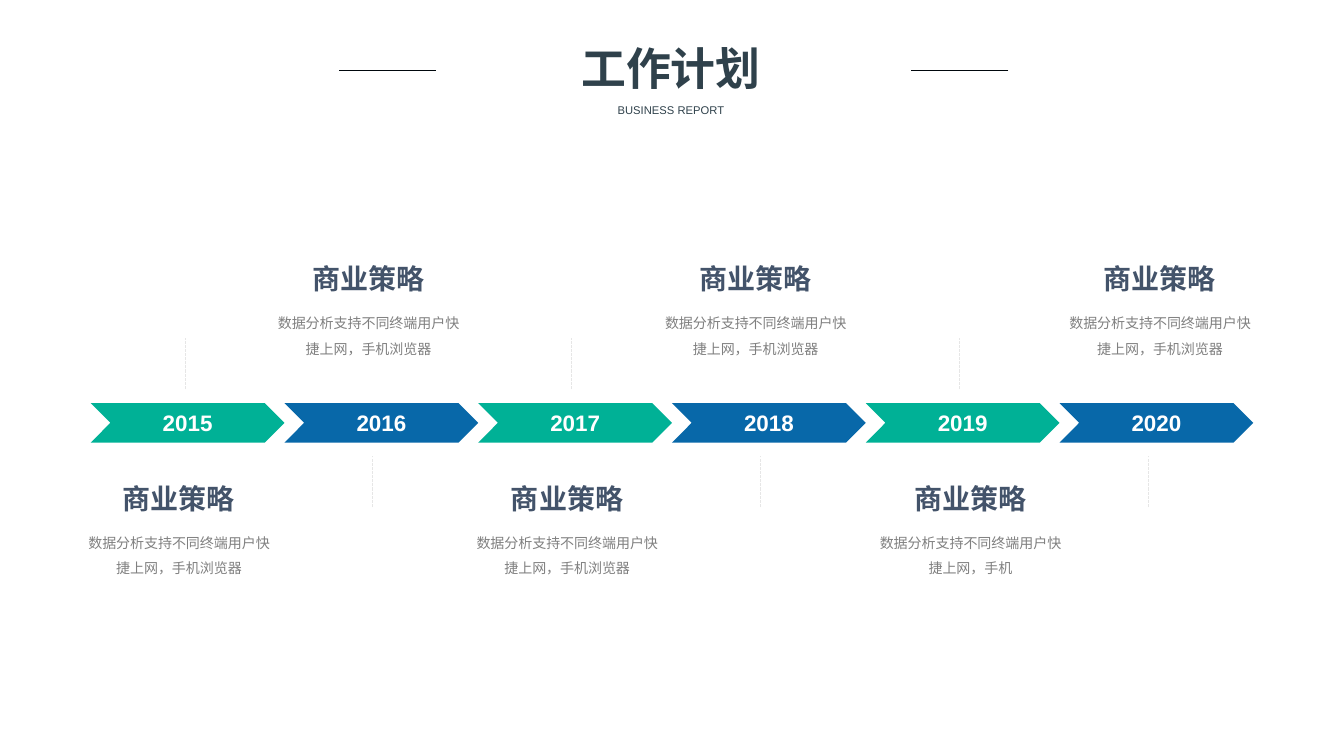
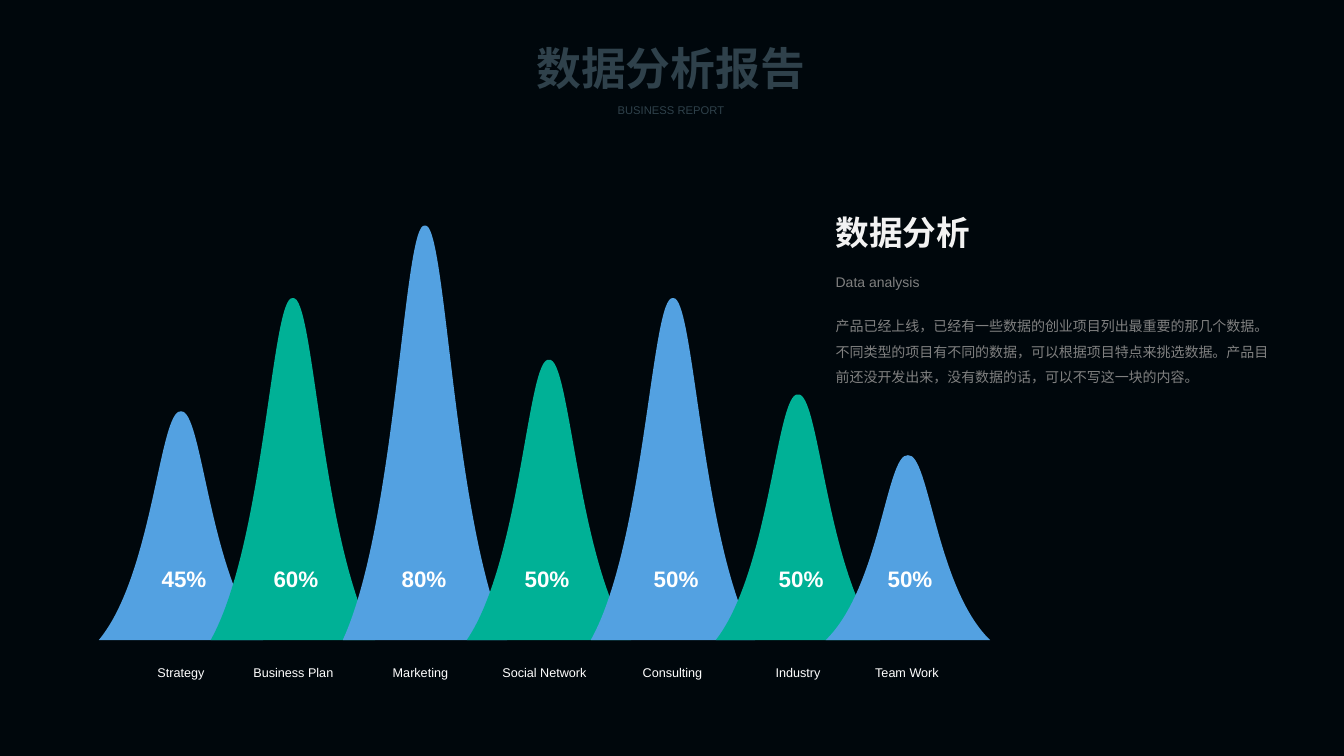
"""Build a work plan timeline slide and a data analysis slide."""
import pptx
import pptx.util
import pptx.dml.color
import pptx.enum.dml
import pptx.enum.shapes
import pptx.enum.text
import pptx.oxml.ns
import lxml.etree
from dataclasses import dataclass

Inches, Pt = pptx.util.Inches, pptx.util.Pt
ALIGN = pptx.enum.text.PP_ALIGN
ANCHOR = pptx.enum.text.MSO_ANCHOR
AUTO_SIZE = pptx.enum.text.MSO_AUTO_SIZE
SHAPE = pptx.enum.shapes.MSO_SHAPE
qn = pptx.oxml.ns.qn


@dataclass(frozen=True)
class Theme:
    font: str = "Arial"
    white: str = "FFFFFF"
    night: str = "00070C"
    title: str = "2F414B"
    heading: str = "43536A"
    light: str = "F2F2F2"
    grey: str = "808080"
    guide: str = "E6E6E6"
    green: str = "00B196"
    blue: str = "0868A9"
    sky: str = "53A1E1"
    title_size: int = 32
    topic_size: int = 24
    heading_size: int = 20
    value_size: int = 16
    body_size: int = 10
    label_size: int = 9
    subtitle_size: int = 8


T = Theme()

SUBTITLE = "BUSINESS REPORT"
PLAN_TITLE = "工作计划"
STEP_HEADING = "商业策略"
STEP_TEXT = "数据分析支持不同终端用户快捷上网，手机浏览器"
STEP_SHORT = "数据分析支持不同终端用户快捷上网，手机"
# year, text left, guide x, text
STEPS = [
    ("2015", 0.74, 1.84, STEP_TEXT),
    ("2016", 2.62, 3.69, STEP_TEXT),
    ("2017", 4.59, 5.67, STEP_TEXT),
    ("2018", 6.46, 7.54, STEP_TEXT),
    ("2019", 8.59, 9.52, STEP_SHORT),
    ("2020", 10.47, 11.39, STEP_TEXT),
]

REPORT_TITLE = "数据分析报告"
TOPIC = "数据分析"
TOPIC_EN = "Data analysis"
TOPIC_TEXT = ("产品已经上线，已经有一些数据的创业项目列出最重要的那几个数据。"
              "不同类型的项目有不同的数据，可以根据项目特点来挑选数据。"
              "产品目前还没开发出来，没有数据的话，可以不写这一块的内容。")
# value, value left, label, label left, label width, peak left, peak height
PEAKS = [
    ("45%", 1.5, "Strategy", 1.46, 0.67, 0.98, 2.3),
    ("60%", 2.61, "Business Plan", 2.41, 1, 2.09, 3.44),
    ("80%", 3.88, "Marketing", 3.79, 0.76, 3.4, 4.17),
    ("50%", 5.1, "Social Network", 4.88, 1.04, 4.63, 2.82),
    ("50%", 6.38, "Consulting", 6.27, 0.8, 5.86, 3.44),
    ("50%", 7.62, "Industry", 7.59, 0.65, 7.1, 2.47),
    ("50%", 8.7, "Team Work", 8.57, 0.85, 8.19, 1.86),
]


def rgb(color):
    return pptx.dml.color.RGBColor.from_string(color)


def write(shape, text, size, color, bold=False, align=ALIGN.CENTER,
          anchor=ANCHOR.TOP, wrap=True, spacing=None,
          auto_size=AUTO_SIZE.SHAPE_TO_FIT_TEXT):
    tf = shape.text_frame
    tf.text = text
    tf.word_wrap = wrap
    tf.auto_size = auto_size
    tf.vertical_anchor = anchor
    p = tf.paragraphs[0]
    p.alignment = align
    if spacing:
        p.line_spacing = spacing
    font = p.runs[0].font
    font.name, font.size, font.bold = T.font, Pt(size), bold
    font.color.rgb = rgb(color)


def add_text(s, left, top, width, height, text, size, color, **style):
    box = s.shapes.add_textbox(*map(Inches, (left, top, width, height)))
    write(box, text, size, color, **style)


def paint(shape, color):
    shape.shadow.inherit = False
    shape.fill.solid()
    shape.fill.fore_color.rgb = rgb(color)
    shape.line.fill.background()


def add_line(s, x1, y1, x2, y2, color, width, dash=None):
    line = s.shapes.add_connector(pptx.enum.shapes.MSO_CONNECTOR.STRAIGHT,
                                  *map(Inches, (x1, y1, x2, y2)))
    line.line.color.rgb = rgb(color)
    line.line.width = Pt(width)
    if dash:
        line.line.dash_style = dash
    lxml.etree.SubElement(line._element.spPr, qn("a:effectLst"))


def add_slide(prs, title, background):
    s = prs.slides.add_slide(prs.slide_layouts[5])
    s.background.fill.solid()
    s.background.fill.fore_color.rgb = rgb(background)
    sp = s.shapes.title
    sp.left, sp.top, sp.width, sp.height = map(Inches, (4.6, 0.35, 4.11, 0.64))
    write(sp, title, T.title_size, T.title, bold=True)
    add_text(s, 5.86, 0.98, 1.59, 0.24, SUBTITLE, T.subtitle_size, T.title)
    for right in (4.32, 10):
        add_line(s, right, 0.7, right - 0.96, 0.7, T.night, 0.5)
    return s


def add_peak(s, left, height, color, base=6.35, width=1.63):
    middle, right, top = left + width / 2, left + width, base - height
    corners = [(Inches(x), Inches(y))
               for x, y in ((left, base), (middle, top), (right, base))]
    builder = s.shapes.build_freeform(*corners[0])
    builder.add_line_segments(corners[1:], close=True)
    peak = builder.convert_to_shape()
    apex = (0.5, 0.014)
    curves = [((0.33, 0.72), (0.37, 0), apex), ((0.63, 0), (0.67, 0.72), (1, 1))]
    for segment, curve in zip(list(peak._element.iter(qn("a:lnTo"))), curves):
        bezier = lxml.etree.Element(qn("a:cubicBezTo"))
        for x, y in curve:
            lxml.etree.SubElement(bezier, qn("a:pt"), x=str(int(x * peak.width)),
                                  y=str(int(y * peak.height)))
        segment.getparent().replace(segment, bezier)
    paint(peak, color)


def build_plan(prs):
    s = add_slide(prs, PLAN_TITLE, T.white)
    first, last = 0.9, 12.43
    step = (last - first) / len(STEPS)
    for i, (year, left, guide, text) in enumerate(STEPS):
        below = i % 2 == 0
        arrow = s.shapes.add_shape(
            SHAPE.CHEVRON, *map(Inches, (first + i * step, 4, step, 0.39)))
        paint(arrow, T.green if below else T.blue)
        write(arrow, year, T.value_size, T.white, bold=True,
              anchor=ANCHOR.MIDDLE, wrap=False, auto_size=AUTO_SIZE.NONE)
        guide_top = 3.35 if below else 4.52
        add_line(s, guide, guide_top + 0.51, guide, guide_top, T.guide, 0.75,
                 pptx.enum.dml.MSO_LINE.SQUARE_DOT)
        top = 4.73 if below else 2.55
        add_text(s, left, top, 2.07, 0.44, STEP_HEADING, T.heading_size,
                 T.heading, bold=True)
        add_text(s, left, top + 0.44, 2.07, 0.58, text, T.body_size, T.grey,
                 spacing=1.5)


def build_report(prs):
    s = add_slide(prs, REPORT_TITLE, T.night)
    for i, peak in enumerate(PEAKS):
        add_peak(s, *peak[5:], T.green if i % 2 else T.sky)
    for value, value_left, label, label_left, label_width, *_ in PEAKS:
        add_text(s, value_left, 5.56, 0.65, 0.37, value, T.value_size,
                 T.white, bold=True, wrap=False)
        add_text(s, label_left, 6.55, label_width, 0.25, label, T.label_size,
                 T.white, wrap=False)
    add_text(s, 8.19, 2.05, 3.13, 0.5, TOPIC, T.topic_size, T.light,
             bold=True, align=ALIGN.LEFT)
    for top, width, height, text in ((2.58, 2.55, 0.33, TOPIC_EN),
                                     (3.02, 4.56, 0.86, TOPIC_TEXT)):
        add_text(s, 8.19, top, width, height, text, T.body_size, T.grey,
                 align=ALIGN.LEFT, spacing=1.5)


def main():
    prs = pptx.Presentation()
    prs.slide_width, prs.slide_height = Inches(13.33), Inches(7.5)
    build_plan(prs)
    build_report(prs)
    prs.save("out.pptx")


if __name__ == "__main__":
    main()
